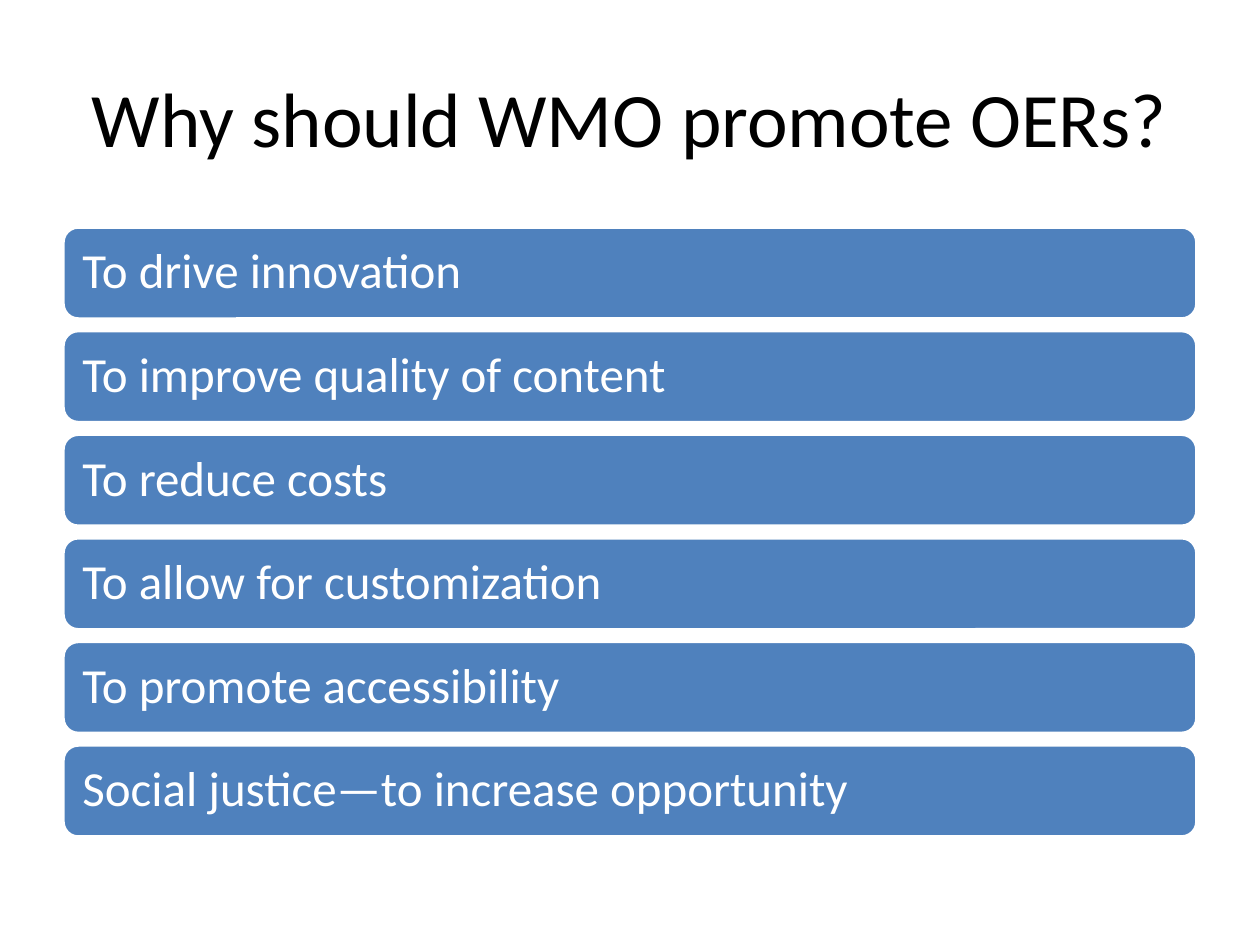
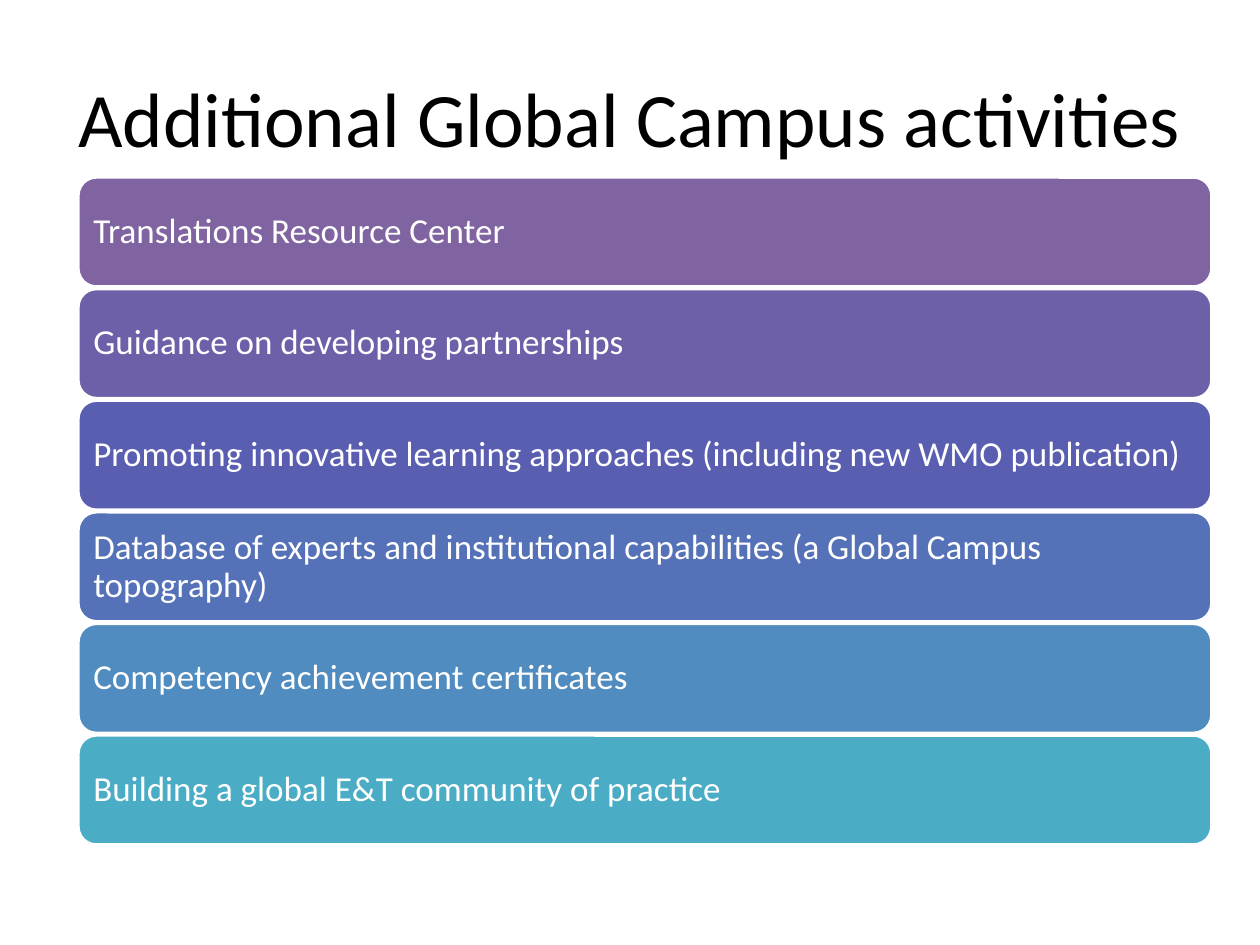
from pptx import Presentation
from pptx.dml.color import RGBColor
from pptx.enum.shapes import MSO_SHAPE
from pptx.enum.text import MSO_ANCHOR, PP_ALIGN
from pptx.util import Pt

SCALE = 914400 / 126
FONT = "Calibri"
BLACK, WHITE, BLUE = "000000", "FFFFFF", "4F81BD"
BLENDS = ["8064A2", "6E5FA9", "5A5EB1", "5572B8", "508CBF", "4BACC6"]

REASONS = [
    "To drive innovation",
    "To improve quality of content",
    "To reduce costs",
    "To allow for customization",
    "To promote accessibility",
    "Social justice—to increase opportunity",
]
PLANS = [
    "Translations Resource Center",
    "Guidance on developing partnerships",
    "Promoting innovative learning approaches (including new WMO publication)",
    "Database of experts and institutional capabilities (a Global Campus topography)",
    "Competency achievement certificates",
    "Building a global E&T community of practice",
]


def px(length):
    """Turn pixels into EMU."""
    return round(length * SCALE)


def tint(code):
    """Turn a hex string into a colour."""
    return RGBColor.from_string(code)


def write(shape, text, size, color=WHITE, align=PP_ALIGN.LEFT, inset=6, leading=1.0):
    """Put one formatted, vertically centred paragraph into a shape."""
    frame = shape.text_frame
    frame.word_wrap = True
    frame.vertical_anchor = MSO_ANCHOR.MIDDLE
    frame.margin_left = frame.margin_right = px(inset)
    frame.margin_top = frame.margin_bottom = px(inset)
    line = frame.paragraphs[0]
    line.alignment = align
    line.line_spacing = leading
    run = line.add_run()
    run.text = text
    run.font.name = FONT
    run.font.size = Pt(size)
    run.font.color.rgb = tint(color)


def add_page(deck, title):
    """Add a blank slide with a centred title."""
    page = deck.slides.add_slide(deck.slide_layouts[6])
    box = page.shapes.add_textbox(px(63), px(38), px(1134), px(157))
    write(box, title, 44, color=BLACK, align=PP_ALIGN.CENTER)
    return page


def add_bar(page, text, left, top, height, fill, size, inset):
    """Add one rounded bar with its label."""
    bar = page.shapes.add_shape(
        MSO_SHAPE.ROUNDED_RECTANGLE, px(left), px(top), px(1134), px(height))
    bar.shadow.inherit = False
    bar.fill.solid()
    bar.fill.fore_color.rgb = tint(fill)
    bar.line.color.rgb = tint(WHITE)
    bar.line.width = Pt(2)
    write(bar, text, size, inset=inset, leading=0.9)


def add_stack(page, labels, fills, left, top, bottom, height, size, inset):
    """Spread equal bars evenly from top to bottom."""
    pitch = (bottom - top - height) / (len(labels) - 1)
    for row, (label, fill) in enumerate(zip(labels, fills)):
        add_bar(page, label, left, top + row * pitch, height, fill, size, inset)


def main():
    """Build and save the deck."""
    deck = Presentation()
    deck.slide_width, deck.slide_height = px(1260), px(945)

    page = add_page(deck, "Why should WMO promote OERs?")
    add_stack(page, REASONS, [BLUE] * len(REASONS), left=63, top=227,
              bottom=837, height=92, size=28, inset=15)

    page = add_page(deck, "Additional Global Campus activities")
    add_stack(page, PLANS, BLENDS, left=78, top=177,
              bottom=845, height=110, size=20, inset=10)

    deck.save("out.pptx")


if __name__ == "__main__":
    main()
